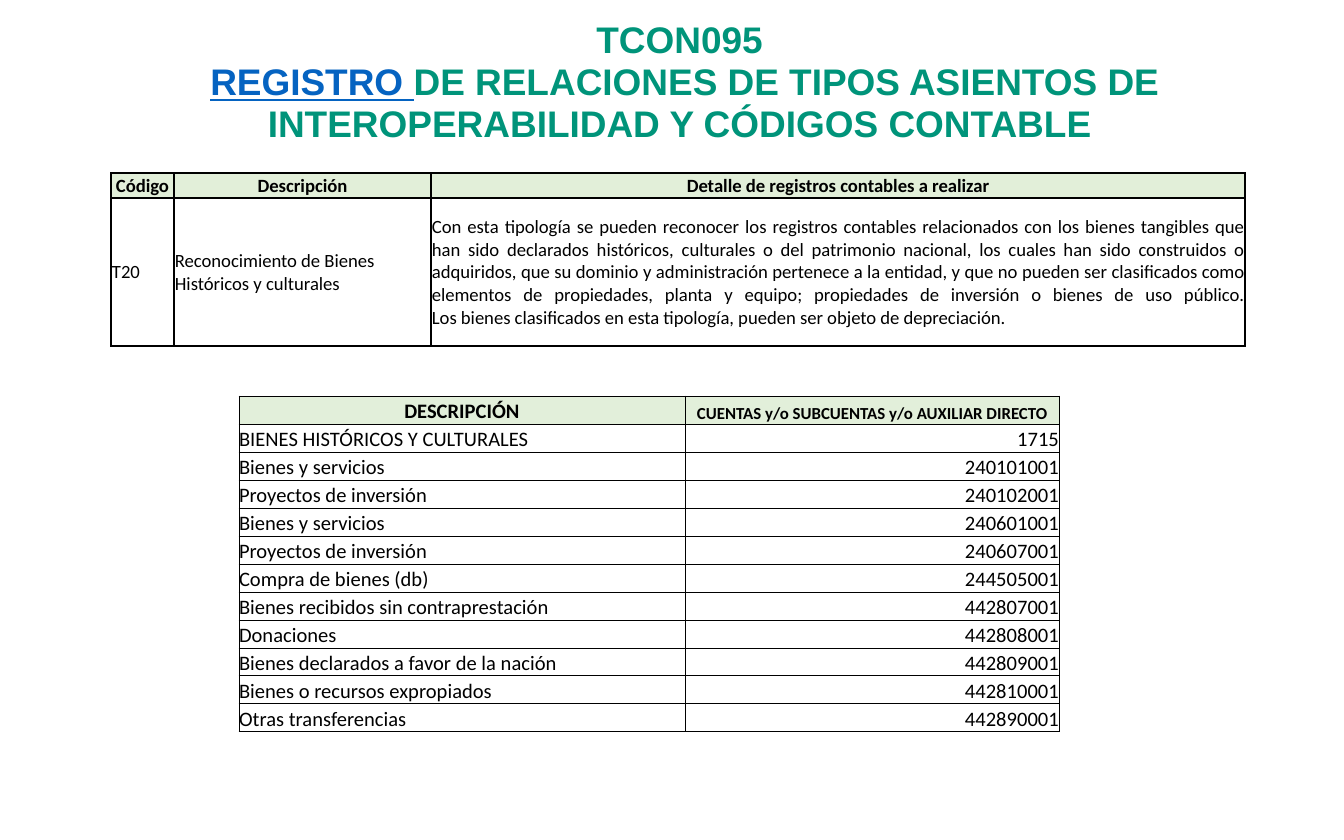
from lxml import etree
from pptx import Presentation
from pptx.dml.color import RGBColor
from pptx.enum.text import MSO_ANCHOR, PP_ALIGN
from pptx.oxml.ns import qn
from pptx.util import Pt

SCALE = 914400 / 134.4
LEFT, CENTER, RIGHT = PP_ALIGN.LEFT, PP_ALIGN.CENTER, PP_ALIGN.RIGHT
JUSTIFY = PP_ALIGN.JUSTIFY
MIDDLE, BOTTOM = MSO_ANCHOR.MIDDLE, MSO_ANCHOR.BOTTOM
GREEN, BLUE, BLACK = "00947A", "0563C1", "000000"

HEADS = ["Código", "Descripción", "Detalle de registros contables a realizar"]
TYPE = [
    "T20",
    "Reconocimiento de Bienes Históricos y culturales",
    "Con esta tipología se pueden reconocer los registros contables "
    "relacionados con los bienes tangibles que han sido declarados históricos, "
    "culturales o del patrimonio nacional, los cuales han sido construidos o "
    "adquiridos, que su dominio y administración pertenece a la entidad, y que "
    "no pueden ser clasificados como elementos de propiedades, planta y equipo; "
    "propiedades de inversión o bienes de uso público.\v"
    "Los bienes clasificados en esta tipología, pueden ser objeto de depreciación.",
]
TITLES = ["DESCRIPCIÓN", "CUENTAS y/o SUBCUENTAS y/o AUXILIAR DIRECTO"]
ACCOUNTS = [
    ("BIENES HISTÓRICOS Y CULTURALES", "1715"),
    ("Bienes y servicios", "240101001"),
    ("Proyectos de inversión", "240102001"),
    ("Bienes y servicios", "240601001"),
    ("Proyectos de inversión", "240607001"),
    ("Compra de bienes (db)", "244505001"),
    ("Bienes recibidos sin contraprestación", "442807001"),
    ("Donaciones", "442808001"),
    ("Bienes declarados a favor de la nación", "442809001"),
    ("Bienes o recursos expropiados", "442810001"),
    ("Otras transferencias", "442890001"),
]


def px(length):
    """Turn px into EMU."""
    return round(length * SCALE)


def color(code):
    """Turn a hex string into a colour."""
    return RGBColor.from_string(code)


def style(run, face, size, tone, bold):
    """Format one run."""
    font = run.font
    font.name, font.size, font.bold = face, Pt(size), bold
    font.color.rgb = color(tone)


def pad(item, side, top, base):
    """Set the inner margins of a frame or cell."""
    item.margin_left = item.margin_right = px(side)
    item.margin_top, item.margin_bottom = px(top), px(base)


def add_title(slide):
    """Add the heading with its underlined word."""
    frame = slide.shapes.add_textbox(px(15), px(23), px(1329), px(120)).text_frame
    frame.word_wrap = True
    frame.vertical_anchor = MIDDLE
    pad(frame, 12, 0, 0)
    para = frame.paragraphs[0]
    para.alignment, para.line_spacing = CENTER, 0.94
    para.text = "TCON095\v "
    word, rest = para.add_run(), para.add_run()
    word.text = "REGISTRO "
    rest.text = "DE RELACIONES DE TIPOS ASIENTOS DE INTEROPERABILIDAD Y CÓDIGOS CONTABLE"
    for run in para.runs:
        style(run, "Arial", 19.8, GREEN, True)
    word.font.color.rgb = color(BLUE)
    word.font.underline = True


def add_edges(cell, width):
    """Draw the four borders of a cell."""
    props = cell._tc.get_or_add_tcPr()
    for name in ("a:lnL", "a:lnR", "a:lnT", "a:lnB"):
        line = etree.SubElement(props, qn(name), w=str(Pt(width)))
        fill = etree.SubElement(line, qn("a:solidFill"))
        etree.SubElement(fill, qn("a:srgbClr"), val=BLACK)


def fill_cell(cell, text, size, bold, align, anchor):
    """Write and format the text of a cell."""
    cell.text_frame.text = text
    cell.vertical_anchor = anchor
    para = cell.text_frame.paragraphs[0]
    para.alignment = align
    for run in para.runs:
        style(run, "Calibri", size, BLACK, bold)


def add_grid(slide, left, top, cols, rows, data, edge, tint, sizes, aligns, anchor, inset):
    """Add a bordered table with a tinted head row."""
    frame = slide.shapes.add_table(
        len(rows), len(cols), px(left), px(top), px(sum(cols)), px(sum(rows)))
    table = frame.table
    table.first_row = table.horz_banding = False
    for col, width in zip(table.columns, cols):
        col.width = px(width)
    for r, (height, texts) in enumerate(zip(rows, data)):
        table.rows[r].height = px(height)
        head = r == 0
        for c, text in enumerate(texts):
            cell = table.cell(r, c)
            pad(cell, inset, inset, 0)
            add_edges(cell, edge)
            if head:
                cell.fill.solid()
                cell.fill.fore_color.rgb = color(tint)
            else:
                cell.fill.background()
            size = sizes[c] if head else sizes[0]
            fill_cell(cell, text, size, head, CENTER if head else aligns[c], anchor)


def main():
    """Build and save the slide."""
    deck = Presentation()
    deck.slide_width, deck.slide_height = px(1344), px(840)
    slide = deck.slides.add_slide(deck.slide_layouts[6])
    add_title(slide)
    add_grid(slide, 111, 173, [63, 257, 814], [25, 148], [HEADS, TYPE],
             1, "E2EFD9", [10, 10, 10], [LEFT, LEFT, JUSTIFY], MIDDLE, 1)
    data = [TITLES, *ACCOUNTS]
    add_grid(slide, 239, 396, [446, 374], [28] * len(data), data,
             0.5, "E2EFDA", [11, 9], [LEFT, RIGHT], BOTTOM, 0)
    deck.save("out.pptx")


if __name__ == "__main__":
    main()
